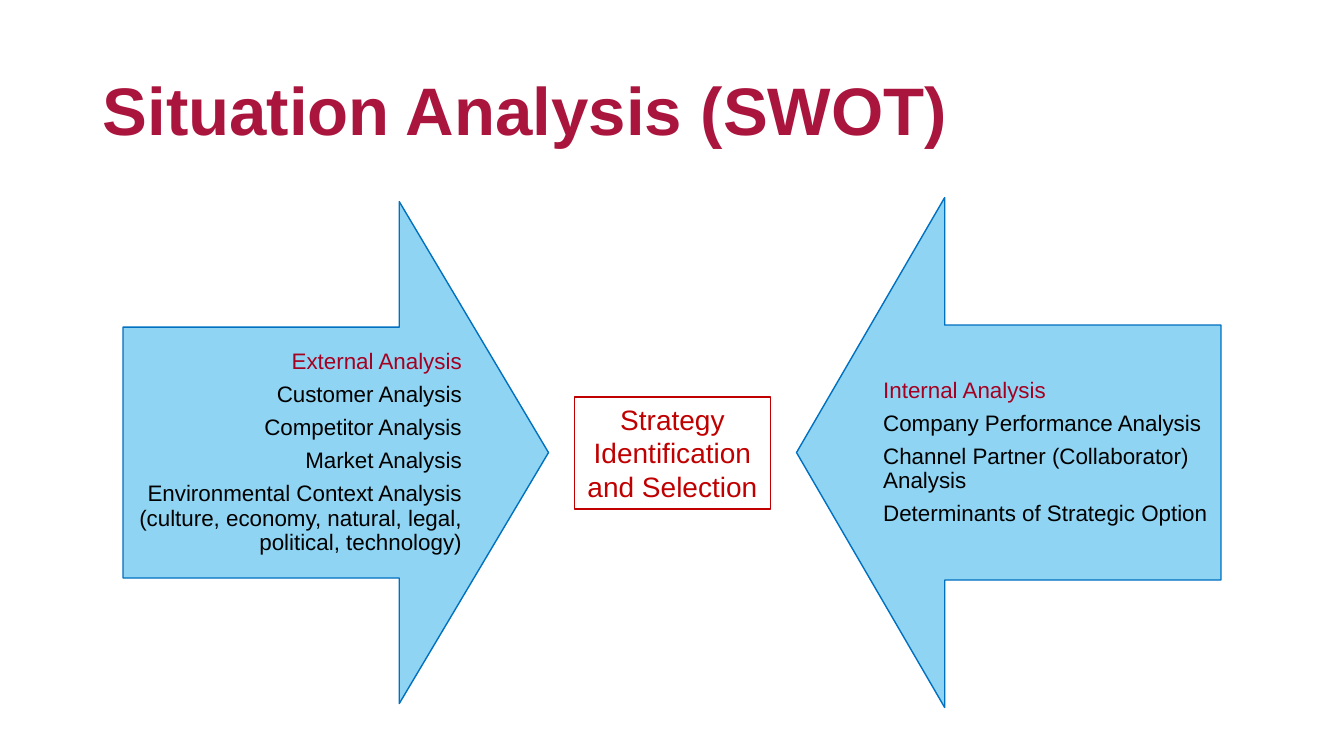
"""Build the Situation Analysis (SWOT) slide."""
from dataclasses import dataclass

from pptx import Presentation
from pptx.dml.color import RGBColor
from pptx.enum.shapes import MSO_SHAPE
from pptx.enum.text import MSO_ANCHOR, PP_ALIGN
from pptx.shapes.base import BaseShape
from pptx.slide import Slide
from pptx.text.text import _Paragraph as Paragraph
from pptx.util import Inches, Pt

COLORS = {
    "title": "AA153D",
    "heading": "A50021",
    "body": "000000",
    "arrow": "8FD4F2",
    "outline": "0070C0",
    "strategy": "C00000",
}
MIDDLE = 4.49
TIP_INSET = 0.86
TAIL_INSET = 0.12


@dataclass(frozen=True)
class AnalysisArrow:
    tail: float
    neck: float
    tip: float
    half_height: float
    alignment: PP_ALIGN
    lines: tuple[str, ...]


ARROWS = (
    AnalysisArrow(1.22, 3.96, 5.44, 2.49, PP_ALIGN.RIGHT, (
        "External Analysis",
        "Customer Analysis",
        "Competitor Analysis",
        "Market Analysis",
        "Environmental Context Analysis (culture, economy, natural, legal, political, technology)",
    )),
    AnalysisArrow(12.11, 9.37, 7.9, 2.53, PP_ALIGN.LEFT, (
        "Internal Analysis",
        "Company Performance Analysis",
        "Channel Partner (Collaborator) Analysis",
        "Determinants of Strategic Option",
    )),
)


def color(name: str) -> RGBColor:
    return RGBColor.from_string(COLORS[name])


def style_text(paragraph: Paragraph, size: int, color_name: str, bold: bool = False) -> None:
    for span in paragraph.runs:
        span.font.name = "Arial"
        span.font.size = Pt(size)
        span.font.bold = bold
        span.font.color.rgb = color(color_name)


def style_outline(shape: BaseShape, color_name: str) -> None:
    shape.shadow.inherit = False
    shape.line.color.rgb = color(color_name)
    shape.line.width = Pt(1)


def add_title(page: Slide) -> None:
    box = page.shapes.add_textbox(Inches(0.92), Inches(0.4), Inches(11.5), Inches(1.45))
    frame = box.text_frame
    frame.text = "Situation Analysis (SWOT)"
    frame.word_wrap = True
    frame.vertical_anchor = MSO_ANCHOR.MIDDLE
    frame.paragraphs[0].line_spacing = 0.9
    style_text(frame.paragraphs[0], 48, "title", bold=True)


def add_arrow(page: Slide, arrow: AnalysisArrow) -> None:
    half_body = arrow.half_height / 2
    upper = [
        (arrow.neck, -arrow.half_height),
        (arrow.neck, -half_body),
        (arrow.tail, -half_body),
    ]
    lower = [(x, -offset) for x, offset in reversed(upper)]
    points = [(Inches(x), Inches(MIDDLE + offset)) for x, offset in upper + lower]
    builder = page.shapes.build_freeform(Inches(arrow.tip), Inches(MIDDLE))
    builder.add_line_segments(points, close=True)
    shape = builder.convert_to_shape()
    shape.fill.solid()
    shape.fill.fore_color.rgb = color("arrow")
    style_outline(shape, "outline")

    frame = shape.text_frame
    frame.text = "\n".join(arrow.lines)
    frame.word_wrap = True
    frame.vertical_anchor = MSO_ANCHOR.MIDDLE
    points_right = arrow.tip > arrow.tail
    frame.margin_left = Inches(TAIL_INSET if points_right else TIP_INSET)
    frame.margin_right = Inches(TIP_INSET if points_right else TAIL_INSET)
    frame.margin_top = frame.margin_bottom = Inches(1.38)
    for index, paragraph in enumerate(frame.paragraphs):
        paragraph.alignment = arrow.alignment
        paragraph.line_spacing = 0.9
        paragraph.space_after = Pt(6.4)
        style_text(paragraph, 16, "body" if index else "heading")


def add_strategy(page: Slide) -> None:
    box = page.shapes.add_shape(
        MSO_SHAPE.RECTANGLE, Inches(5.7), Inches(3.94), Inches(1.94), Inches(1.11)
    )
    box.fill.background()
    style_outline(box, "strategy")
    frame = box.text_frame
    frame.text = "Strategy Identification and Selection"
    frame.word_wrap = True
    frame.vertical_anchor = MSO_ANCHOR.TOP
    frame.paragraphs[0].alignment = PP_ALIGN.CENTER
    style_text(frame.paragraphs[0], 20, "strategy")


def main() -> None:
    deck = Presentation()
    deck.slide_width = Inches(13.33)
    deck.slide_height = Inches(7.5)
    page = deck.slides.add_slide(deck.slide_layouts[6])
    add_title(page)
    for arrow in ARROWS:
        add_arrow(page, arrow)
    add_strategy(page)
    deck.save("out.pptx")


if __name__ == "__main__":
    main()
